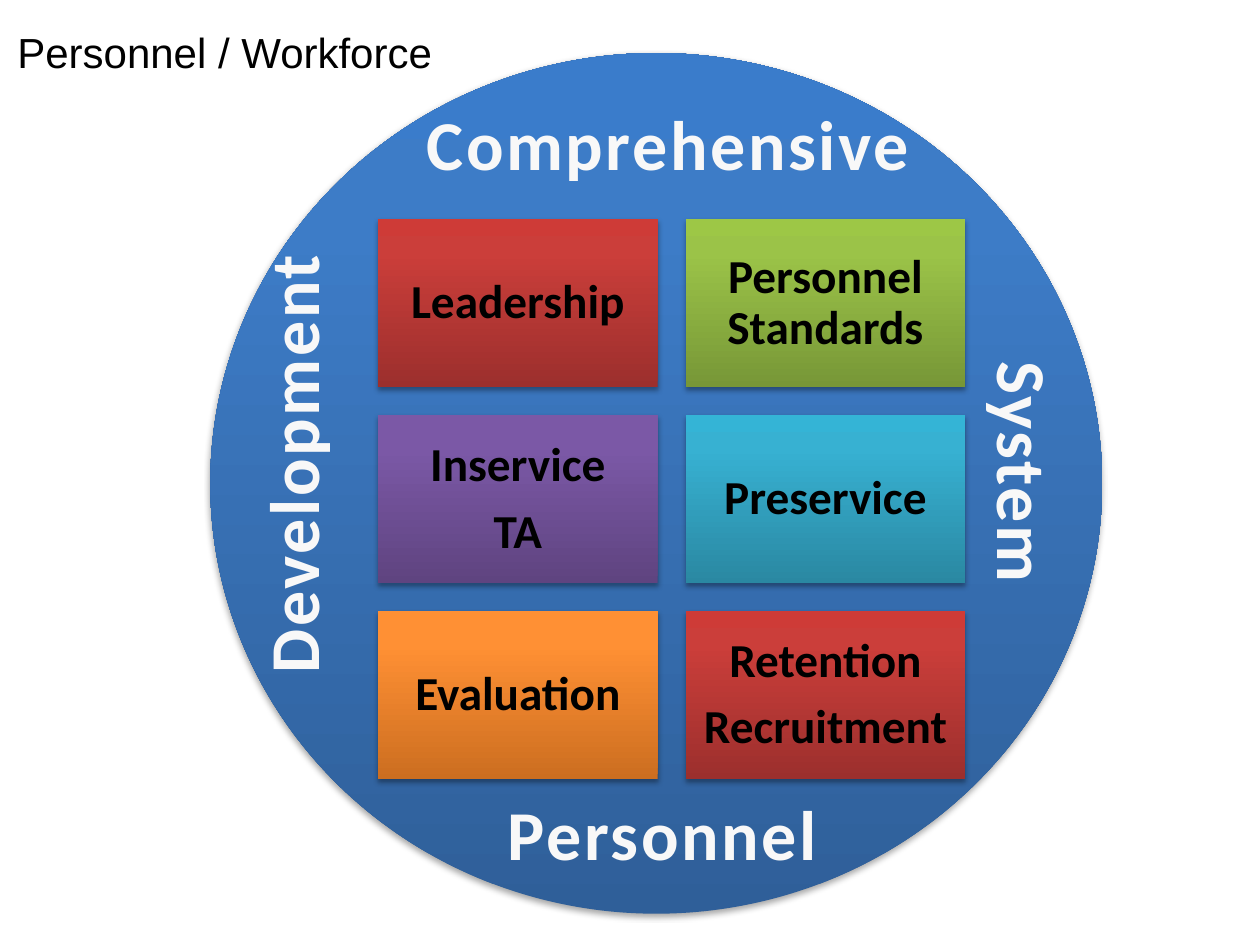
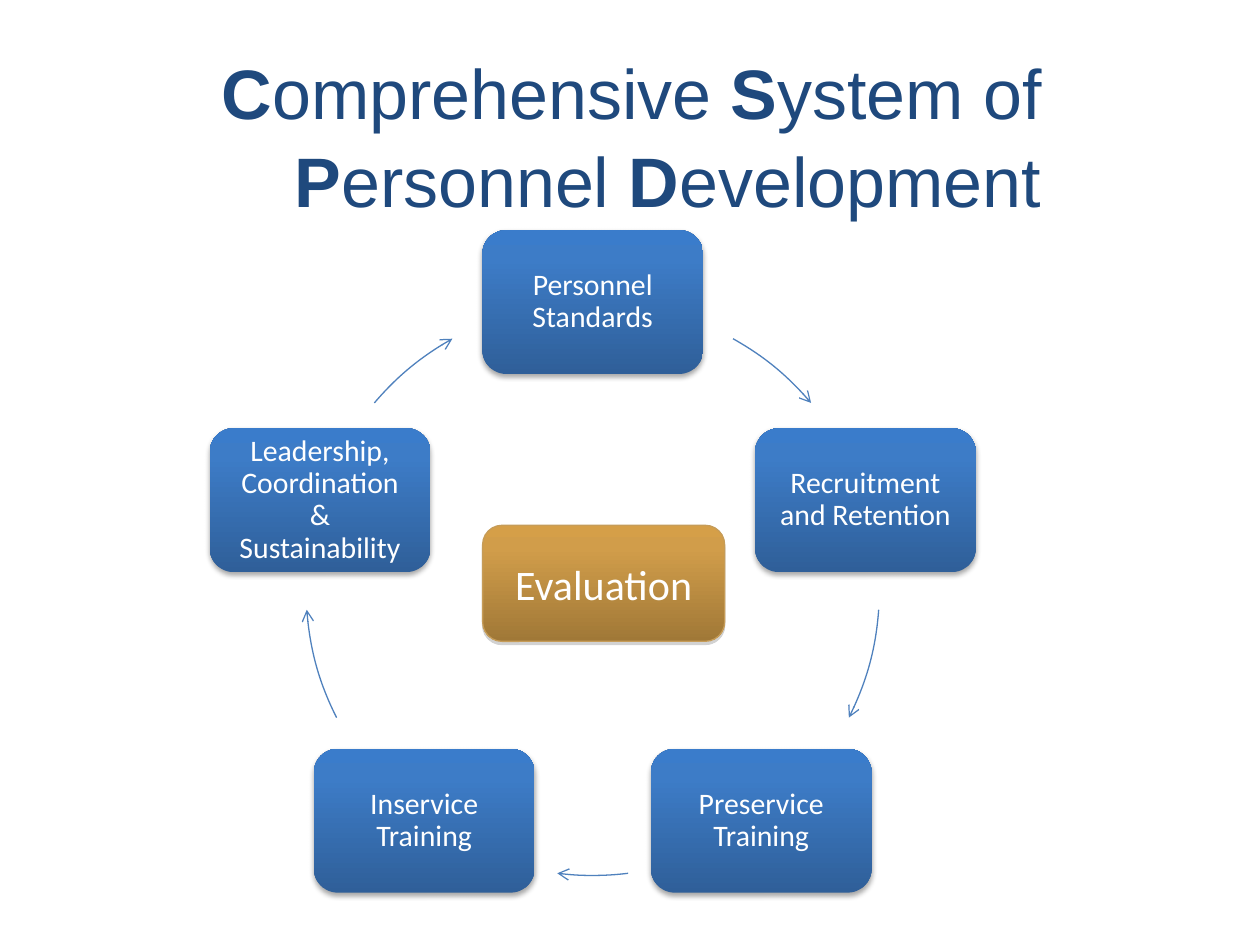
import dataclasses
import math
import typing

import pptx
import pptx.dml.color
import pptx.enum.shapes
import pptx.enum.text
import pptx.oxml
import pptx.oxml.ns
import pptx.util

Cm = pptx.util.Cm
Pt = pptx.util.Pt
RGBColor = pptx.dml.color.RGBColor
Shapes = pptx.enum.shapes.MSO_SHAPE
Align = pptx.enum.text.PP_ALIGN
Anchor = pptx.enum.text.MSO_ANCHOR
AutoSize = pptx.enum.text.MSO_AUTO_SIZE
qn = pptx.oxml.ns.qn
DRAWING = 'xmlns:a="http://schemas.openxmlformats.org/drawingml/2006/main"'


class Frame(typing.NamedTuple):
    """Left, top, width and height in centimetres."""
    left: float
    top: float
    width: float
    height: float

    def lengths(self) -> list[pptx.util.Length]:
        return [Cm(value) for value in self]


class Gradient(typing.NamedTuple):
    """Colour stops (percent, colour) and the counter-clockwise angle."""
    stops: tuple[tuple[int, str], ...]
    angle: int = 90


class Shadow(typing.NamedTuple):
    color: str = "000000"
    blur: float = 3.1


class TextStyle(typing.NamedTuple):
    size: float
    color: str
    font: str = "Calibri"
    bold: bool = False
    letter_spacing: float = 0
    line_spacing: float = 1
    space_after: float = 0
    align: Align = Align.CENTER


def upward(dark: str, middle: str, light: str) -> Gradient:
    return Gradient(((0, dark), (80, middle), (100, light)))


@dataclasses.dataclass(frozen=True)
class Theme:
    blue = upward("2F5F99", "3D7CC7", "3A7CCB")
    red = upward("9C2F2D", "CB3E3A", "CE3B37")
    green = upward("779737", "9BC348", "9DC746")
    purple = upward("5F4480", "7B58A6", "7C57A8")
    teal = upward("2A88A2", "37B1D2", "34B4D6")
    orange = upward("CC6E20", "FF9034", "FF9136")
    gold = Gradient(((0, "D59F48"), (20, "D19D4A"), (100, "A07837")), 270)
    gold_line = "C69C58"
    arrow_line = "4F81BD"
    soft_shadow = Shadow()
    hard_shadow = Shadow("808080", 0)
    heading = TextStyle(24, "000000", "Arial", align=Align.LEFT)
    title = TextStyle(40, "1F497D", "Arial", line_spacing=1.05)
    ring_label = TextStyle(40, "F8F8F8", bold=True, letter_spacing=1.5)
    tile = TextStyle(27, "000000", bold=True, line_spacing=0.9, space_after=9)
    node = TextStyle(17, "FFFFFF", line_spacing=0.9, space_after=6)
    hub = TextStyle(24, "FFFFFF")


THEME = Theme()


class Tile(typing.NamedTuple):
    text: str
    fill: Gradient


class RingLabel(typing.NamedTuple):
    text: str
    frame: Frame
    rotation: int = 0


class CycleStep(typing.NamedTuple):
    """A node and the angles, clockwise from three o'clock, of its outgoing arrow."""
    text: str
    arrow_start: float
    arrow_end: float


TILES = (
    Tile("Leadership", THEME.red),
    Tile("Personnel Standards", THEME.green),
    Tile("Inservice\nTA", THEME.purple),
    Tile("Preservice", THEME.teal),
    Tile("Evaluation", THEME.orange),
    Tile("Retention\nRecruitment", THEME.red),
)
TILE_COLUMNS = 2
FIRST_TILE = Frame(7.62, 4.42, 5.64, 3.39)
TILE_GAP = 0.56

RING_LABELS = (
    RingLabel("Comprehensive", Frame(8.26, 1.91, 10.41, 1.96)),
    RingLabel("System", Frame(18.14, 8.53, 5.05, 1.96), 90),
    RingLabel("Personnel", Frame(9.91, 15.82, 6.88, 1.96)),
    RingLabel("Development", Frame(1.35, 8.38, 9.09, 1.96), 270),
)

CYCLE = (
    CycleStep("Personnel Standards", 299.3, 319.6),
    CycleStep("Recruitment and Retention", 4.2, 26.7),
    CycleStep("Preservice Training", 82.9, 97.1),
    CycleStep("Inservice Training", 153.3, 175.8),
    CycleStep("Leadership, Coordination & Sustainability", 220.4, 240.7),
)
CYCLE_X, CYCLE_Y, CYCLE_RADIUS = 11.95, 11.87, 5.78
NODE_WIDTH, NODE_HEIGHT = 4.45, 2.9


def style_span(span, style: TextStyle) -> None:
    span.font.size = Pt(style.size)
    span.font.name = style.font
    span.font.bold = style.bold
    span.font.color.rgb = RGBColor.from_string(style.color)
    if style.letter_spacing:
        span.font._element.set("spc", str(round(style.letter_spacing * 100)))


def style_para(para, style: TextStyle) -> None:
    para.alignment = style.align
    para.line_spacing = style.line_spacing
    para.space_after = Pt(style.space_after)
    for span in para.runs:
        style_span(span, style)


def write(box, text: str, style: TextStyle) -> None:
    box.text_frame.text = text
    for para in box.text_frame.paragraphs:
        style_para(para, style)


def paint(shape, gradient: Gradient, shadow: Shadow) -> None:
    """Give the shape its gradient, no outline and a shadow straight below."""
    shape.fill.gradient()
    shape.fill.gradient_angle = gradient.angle
    properties = shape._element.spPr
    stop_list = properties.find(".//" + qn("a:gsLst"))
    for stop in list(stop_list):
        stop_list.remove(stop)
    for percent, color in gradient.stops:
        stop_list.append(pptx.oxml.parse_xml(
            f'<a:gs {DRAWING} pos="{percent * 1000}"><a:srgbClr val="{color}"/></a:gs>'))
    shape.line.fill.background()
    shape.shadow.inherit = False
    properties.find(qn("a:effectLst")).append(pptx.oxml.parse_xml(
        f'<a:outerShdw {DRAWING} blurRad="{Pt(shadow.blur)}" dist="{Pt(1.8)}" '
        f'dir="5400000" rotWithShape="0"><a:srgbClr val="{shadow.color}">'
        '<a:alpha val="35000"/></a:srgbClr></a:outerShdw>'))


def add_block(page, kind: Shapes, frame: Frame, gradient: Gradient,
              shadow: Shadow = THEME.soft_shadow):
    block = page.shapes.add_shape(kind, *frame.lengths())
    paint(block, gradient, shadow)
    return block


def add_text_block(page, kind: Shapes, frame: Frame, gradient: Gradient, text: str,
                   style: TextStyle, inset: float = 0.25,
                   shadow: Shadow = THEME.soft_shadow):
    block = add_block(page, kind, frame, gradient, shadow)
    text_frame = block.text_frame
    text_frame.word_wrap = True
    text_frame.vertical_anchor = Anchor.MIDDLE
    text_frame.margin_left = text_frame.margin_right = Cm(inset)
    text_frame.margin_top = text_frame.margin_bottom = Cm(inset)
    write(block, text, style)
    return block


def add_text_box(page, frame: Frame, wrap: bool = False):
    box = page.shapes.add_textbox(*frame.lengths())
    box.text_frame.word_wrap = wrap
    box.text_frame.auto_size = AutoSize.SHAPE_TO_FIT_TEXT
    return box


def add_arc_arrow(page, start: float, end: float) -> None:
    diameter = 2 * CYCLE_RADIUS
    frame = Frame(CYCLE_X - CYCLE_RADIUS, CYCLE_Y - CYCLE_RADIUS, diameter, diameter)
    arc = page.shapes.add_shape(Shapes.ARC, *frame.lengths())
    # Adjustments count 100000ths, the arc's angles 60000ths of a degree.
    arc.adjustments[0] = start * 0.6
    arc.adjustments[1] = end * 0.6
    arc.fill.background()
    arc.shadow.inherit = False
    arc.line.color.rgb = RGBColor.from_string(THEME.arrow_line)
    arc.line.width = Pt(0.75)
    arc.line._get_or_add_ln().append(
        pptx.oxml.parse_xml(f'<a:tailEnd {DRAWING} type="arrow"/>'))


def add_title(page) -> None:
    """Write the title with its initials in bold and a hanging indent."""
    box = add_text_box(page, Frame(1.52, 0.79, 22.43, 3.68), wrap=True)
    para = box.text_frame.paragraphs[0]
    for word in "Comprehensive |System of |Personnel |Development".split("|"):
        for part in (word[0], word[1:]):
            para.add_run().text = part
    style_para(para, THEME.title)
    for initial in para.runs[::2]:
        initial.font.bold = True
    indents = para._p.get_or_add_pPr()
    indents.set("marL", str(Cm(1.45)))
    indents.set("indent", str(-Cm(1.45)))


def build_workforce_page(page) -> None:
    add_block(page, Shapes.OVAL, Frame(4.24, 1.07, 17.98, 17.35), THEME.blue)
    left, top, width, height = FIRST_TILE
    for index, tile in enumerate(TILES):
        row, column = divmod(index, TILE_COLUMNS)
        frame = Frame(left + column * (width + TILE_GAP),
                      top + row * (height + TILE_GAP), width, height)
        add_text_block(page, Shapes.RECTANGLE, frame, tile.fill, tile.text,
                       THEME.tile, inset=0.28)
    for label in RING_LABELS:
        box = add_text_box(page, label.frame)
        box.rotation = label.rotation
        write(box, label.text, THEME.ring_label)
    heading = add_text_box(page, Frame(0.1, 0.41, 8.97, 1.27))
    write(heading, "Personnel / Workforce", THEME.heading)


def build_cycle_page(page) -> None:
    add_title(page)
    for index, step in enumerate(CYCLE):
        angle = math.radians(360 / len(CYCLE) * index - 90)
        frame = Frame(CYCLE_X + CYCLE_RADIUS * math.cos(angle) - NODE_WIDTH / 2,
                      CYCLE_Y + CYCLE_RADIUS * math.sin(angle) - NODE_HEIGHT / 2,
                      NODE_WIDTH, NODE_HEIGHT)
        add_text_block(page, Shapes.ROUNDED_RECTANGLE, frame, THEME.blue, step.text,
                       THEME.node, inset=0.3)
        add_arc_arrow(page, step.arrow_start, step.arrow_end)
    hub = add_text_block(page, Shapes.ROUNDED_RECTANGLE, Frame(9.73, 10.59, 4.88, 2.34),
                         THEME.gold, "Evaluation", THEME.hub, shadow=THEME.hard_shadow)
    hub.line.color.rgb = RGBColor.from_string(THEME.gold_line)
    hub.line.width = Pt(0.75)


def main() -> None:
    deck = pptx.Presentation()
    deck.slide_width, deck.slide_height = Cm(25.4), Cm(19.05)
    blank = deck.slide_layouts[6]
    for build_page in (build_workforce_page, build_cycle_page):
        build_page(deck.slides.add_slide(blank))
    deck.save("out.pptx")


if __name__ == "__main__":
    main()
